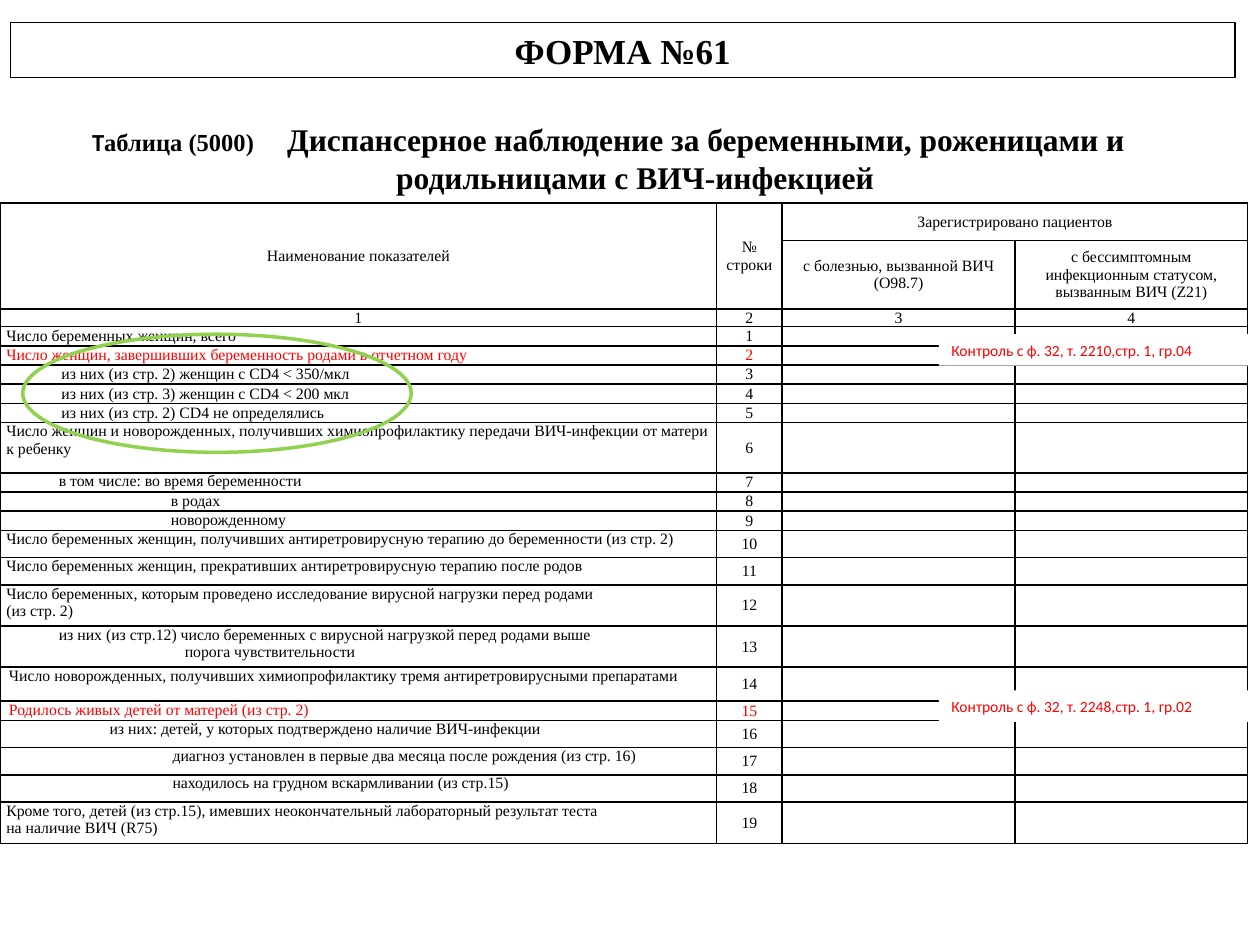
from lxml.etree import SubElement
from pptx import Presentation
from pptx.dml.color import RGBColor
from pptx.enum.shapes import MSO_SHAPE
from pptx.enum.text import MSO_ANCHOR, MSO_AUTO_SIZE, PP_ALIGN
from pptx.oxml.ns import qn
from pptx.util import Pt

COLORS = {"ink": "000000", "alert": "FF0000", "paper": "FFFFFF", "mark": "92D050"}
SERIF, SANS = "Times New Roman", "Calibri"
LINE, SHORT, MEDIUM, TALL = 10.2, 15.6, 19.4, 23.5

COLUMN_WIDTHS = [409.5, 37.5, 133, 133]
HEADER_HEIGHTS = [21.5, 39, LINE]
# Row, column, last row, last column, caption
HEADER_CELLS = [
    (0, 0, 1, 0, "Наименование показателей"),
    (0, 1, 1, 1, "№ строки"),
    (0, 2, 0, 3, "Зарегистрировано пациентов"),
    (1, 2, 1, 2, "с болезнью, вызванной ВИЧ (О98.7)"),
    (1, 3, 1, 3, "с бессимптомным инфекционным статусом, вызванным ВИЧ (Z21)"),
] + [(2, column, 2, column, str(column + 1)) for column in range(4)]

# Height, first-line indent of each paragraph, wording
INDICATORS = [
    (LINE, [0], "Число беременных женщин, всего"),
    (LINE, [0], "Число женщин, завершивших беременность родами в отчетном году"),
    (LINE, [31.5], "из них (из стр. 2) женщин с CD4 < 350/мкл"),
    (LINE, [31.5], "из них (из стр. 3) женщин с CD4 < 200 мкл"),
    (LINE, [31.5], "из них (из стр. 2) CD4 не определялись"),
    (28.7, [0], "Число женщин и новорожденных, получивших химиопрофилактику "
                "передачи ВИЧ-инфекции от матери к ребенку"),
    (LINE, [30], "в том числе: во время беременности"),
    (LINE, [94], "в родах"),
    (LINE, [94], "новорожденному"),
    (SHORT, [0], "Число беременных женщин, получивших антиретровирусную терапию "
                 "до беременности (из стр. 2)"),
    (SHORT, [0], "Число беременных женщин, прекративших антиретровирусную терапию после родов"),
    (TALL, [0, 0], "Число беременных, которым проведено исследование вирусной нагрузки "
                   "перед родами\n(из стр. 2)"),
    (TALL, [30, 102], "из них (из стр.12) число беременных с вирусной нагрузкой "
                      "перед родами выше\nпорога чувствительности"),
    (MEDIUM, [1.5], "Число новорожденных, получивших химиопрофилактику "
                    "тремя антиретровирусными препаратами"),
    (LINE, [1.5], "Родилось живых детей от матерей (из стр. 2)"),
    (SHORT, [59], "из них: детей, у которых подтверждено наличие ВИЧ-инфекции"),
    (SHORT, [95], "диагноз установлен в первые два месяца после рождения (из стр. 16)"),
    (SHORT, [95], "находилось на грудном вскармливании (из стр.15)"),
    (TALL, [0, 0], "Кроме того, детей (из стр.15), имевших неокончательный "
                   "лабораторный результат теста\nна наличие ВИЧ (R75)"),
]
CONTROLLED_ROWS = {2, 15}
LAST_CENTRED_ROW = 5


def rgb(name):
    return RGBColor.from_string(COLORS[name])


def write(paragraph, text, font=SERIF, size=9, color="ink", bold=False,
          align=PP_ALIGN.LEFT, indent=0):
    """Append one formatted run to a paragraph."""
    paragraph.alignment = align
    if indent:
        paragraph._p.get_or_add_pPr().set("indent", str(int(Pt(indent))))
    run = paragraph.add_run()
    run.text = text
    run.font.name, run.font.size, run.font.bold = font, Pt(size), bold
    run.font.color.rgb = rgb(color)


class FormSlide:
    def __init__(self, presentation):
        self.slide = presentation.slides.add_slide(presentation.slide_layouts[5])

    def title(self, text, left, top, width, height):
        title = self.slide.shapes.title
        title.left, title.top, title.width, title.height = map(Pt, (left, top, width, height))
        title.fill.solid()
        title.fill.fore_color.rgb = rgb("paper")
        title.line.color.rgb = rgb("ink")
        title.line.width = Pt(0.75)
        title.text_frame.auto_size = MSO_AUTO_SIZE.NONE
        title.text_frame.vertical_anchor = MSO_ANCHOR.MIDDLE
        write(title.text_frame.paragraphs[0], text, size=20, bold=True, align=PP_ALIGN.CENTER)

    def heading(self, left, top, width, height):
        frame = self.slide.shapes.add_textbox(*map(Pt, (left, top, width, height))).text_frame
        frame.word_wrap = True
        first = frame.paragraphs[0]
        write(first, "Т", font=SANS, size=14, bold=True, indent=32.5)
        write(first, "аблица (5000)\t", size=14, bold=True)
        write(first, "Диспансерное наблюдение за беременными, роженицами и", size=18, bold=True)
        tabs = SubElement(first._p.get_or_add_pPr(), qn("a:tabLst"))
        SubElement(tabs, qn("a:tab"), pos=str(int(Pt(178))), algn="l")
        write(frame.add_paragraph(), "родильницами с ВИЧ-инфекцией", size=18, bold=True,
              align=PP_ALIGN.CENTER)

    def style_cell(self, cell):
        cell.margin_left = cell.margin_right = Pt(3.6)
        cell.margin_top = cell.margin_bottom = 0
        cell.vertical_anchor = MSO_ANCHOR.MIDDLE
        properties = cell._tc.get_or_add_tcPr()
        for side in ("lnL", "lnR", "lnT", "lnB"):
            border = SubElement(properties, qn(f"a:{side}"), w=str(int(Pt(1))))
            fill = SubElement(border, qn("a:solidFill"))
            SubElement(fill, qn("a:srgbClr"), val=COLORS["ink"])
        cell.fill.background()

    def table(self, left, top):
        heights = HEADER_HEIGHTS + [height for height, _, _ in INDICATORS]
        table = self.slide.shapes.add_table(
            len(heights), len(COLUMN_WIDTHS), Pt(left), Pt(top),
            Pt(sum(COLUMN_WIDTHS)), Pt(sum(heights))).table
        for column, width in zip(table.columns, COLUMN_WIDTHS):
            column.width = Pt(width)
        for row, height in zip(table.rows, heights):
            row.height = Pt(height)
        for cell in table.iter_cells():
            self.style_cell(cell)

        # Header
        for row, column, last_row, last_column, caption in HEADER_CELLS:
            cell = table.cell(row, column)
            if (row, column) != (last_row, last_column):
                cell.merge(table.cell(last_row, last_column))
            write(cell.text_frame.paragraphs[0], caption, align=PP_ALIGN.CENTER)

        # Indicators
        for number, (_, indents, wording) in enumerate(INDICATORS, 1):
            row = number + len(HEADER_HEIGHTS) - 1
            color = "alert" if number in CONTROLLED_ROWS else "ink"
            name = table.cell(row, 0)
            if number > LAST_CENTRED_ROW:
                name.vertical_anchor = MSO_ANCHOR.TOP
            for position, (line, indent) in enumerate(zip(wording.split("\n"), indents)):
                frame = name.text_frame
                paragraph = frame.add_paragraph() if position else frame.paragraphs[0]
                write(paragraph, line, color=color, indent=indent)
            write(table.cell(row, 1).text_frame.paragraphs[0], str(number),
                  color=color, align=PP_ALIGN.CENTER)

        # Blank cells keep the small type so that rows stay low
        for cell in table.iter_cells():
            if not cell.text_frame.text:
                SubElement(cell.text_frame.paragraphs[0]._p, qn("a:endParaRPr"), sz="900")

    def control_note(self, text, top):
        note = self.slide.shapes.add_shape(
            MSO_SHAPE.RECTANGLE, Pt(536.5), Pt(top), Pt(183.5), Pt(18))
        note.shadow.inherit = False
        note.fill.solid()
        note.fill.fore_color.rgb = rgb("paper")
        note.line.fill.background()
        note.text_frame.word_wrap = True
        write(note.text_frame.paragraphs[0], text, font=SANS, size=8.9, color="alert")

    def ring(self, left, top, width, height):
        ring = self.slide.shapes.add_shape(
            MSO_SHAPE.OVAL, *map(Pt, (left, top, width, height)))
        ring.shadow.inherit = False
        ring.fill.background()
        ring.line.color.rgb = rgb("mark")
        ring.line.width = Pt(2)


def main():
    presentation = Presentation()
    presentation.slide_width, presentation.slide_height = Pt(720), Pt(540)
    form = FormSlide(presentation)
    form.title("ФОРМА №61", 5.8, 13, 700, 31.5)
    form.table(0, 116)
    form.control_note("Контроль с ф. 32, т. 2210,стр. 1, гр.04", 191)
    form.control_note("Контроль с ф. 32, т. 2248,стр. 1, гр.02", 394.5)
    form.heading(13, 65, 700, 51)
    form.ring(13, 191, 222, 67.5)
    presentation.save("out.pptx")


if __name__ == "__main__":
    main()
